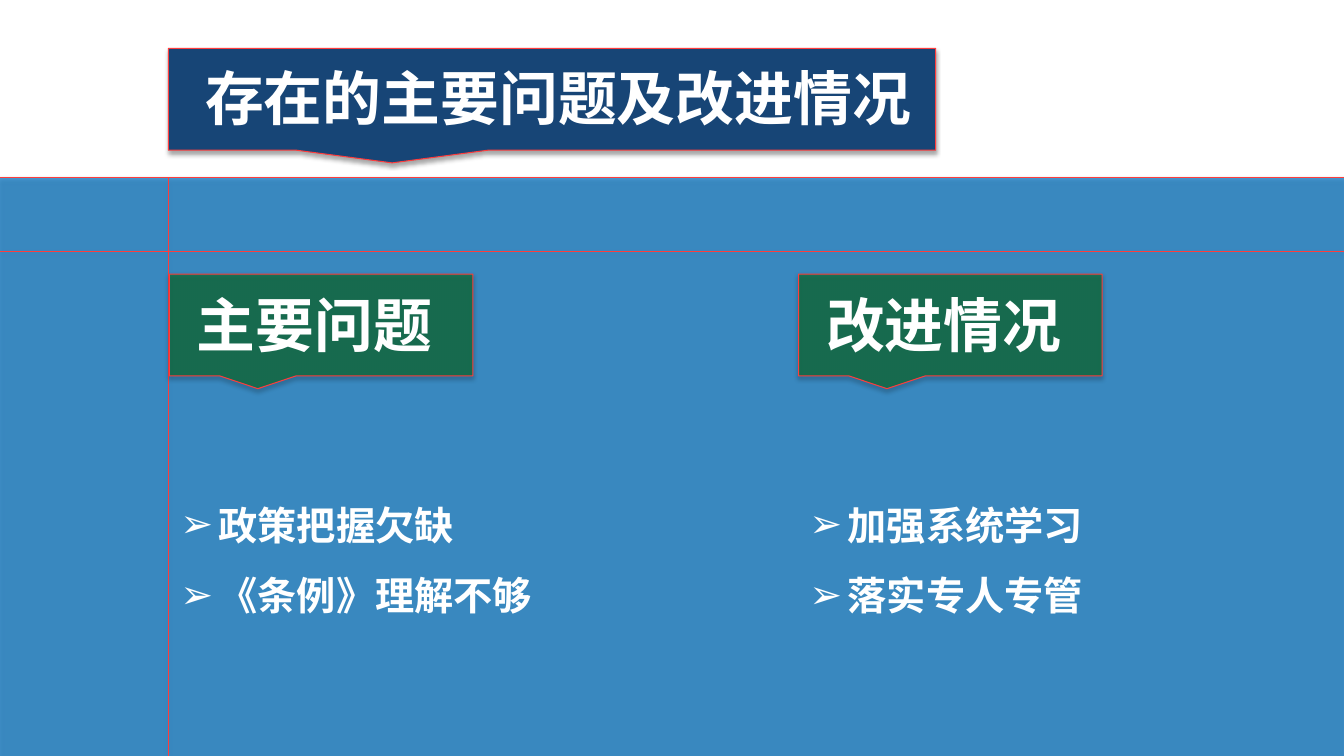
from lxml import etree
from pptx import Presentation
from pptx import util as u
from pptx.dml.color import RGBColor
from pptx.enum import shapes, text
from pptx.oxml.ns import qn

COLORS = {"panel": "0070BF", "section": "006600", "banner": "174576",
          "outline": "FE3D3D", "text": "FFFFFF", "shadow": "000000"}
FONT = "Noto Sans CJK SC"
HEADING_SIZE, ITEM_SIZE = 42, 28
INDENT = u.Inches(0.38)


def rgb(name):
    return RGBColor.from_string(COLORS[name])


def add_block(slide, preset, box, color, opacity=100):
    """Outlined shape with a soft shadow below it."""
    block = slide.shapes.add_shape(preset, *map(u.Inches, box))
    block.fill.solid()
    block.fill.fore_color.rgb = rgb(color)
    if opacity < 100:
        fill = block.fill._xPr.find(qn("a:solidFill"))[0]
        etree.SubElement(fill, qn("a:alpha"), val=str(opacity * 1000))
    block.line.color.rgb = rgb("outline")
    block.line.width = u.Pt(0.75)
    block.shadow.inherit = False
    effects = block._element.spPr.find(qn("a:effectLst"))
    shadow = etree.SubElement(effects, qn("a:outerShdw"), blurRad=str(u.Pt(3.1)),
                              dist=str(u.Pt(1.8)), dir="5400000", rotWithShape="0")
    tint = etree.SubElement(shadow, qn("a:srgbClr"), val=COLORS["shadow"])
    etree.SubElement(tint, qn("a:alpha"), val="35000")


def style_run(run, size):
    run.font.size = u.Pt(size)
    run.font.bold = True
    run.font.name = FONT
    run.font.color.rgb = rgb("text")
    etree.SubElement(run.font._element, qn("a:ea"), typeface=FONT)


def set_heading(holder, words):
    frame = holder.text_frame
    frame.word_wrap = True
    frame.auto_size = text.MSO_AUTO_SIZE.NONE
    frame.vertical_anchor = text.MSO_ANCHOR.MIDDLE
    frame.text = words
    frame.paragraphs[0].alignment = text.PP_ALIGN.CENTER
    style_run(frame.paragraphs[0].runs[0], HEADING_SIZE)


def add_title(slide, left, top):
    add_block(slide, shapes.MSO_SHAPE.RECTANGULAR_CALLOUT,
              (left, top, 7.61, 1.01), "banner")
    title = slide.shapes.title
    title.left, title.top = u.Inches(left - 0.24), u.Inches(top + 0.08)
    title.width, title.height = u.Inches(8.21), u.Inches(0.81)
    set_heading(title, "存在的主要问题及改进情况")
    # Bring the title in front of its banner
    slide.shapes._spTree.append(title._element)


def add_bullets(slide, box, items):
    frame = slide.shapes.add_textbox(*map(u.Inches, box)).text_frame
    frame.word_wrap = True
    frame.text = "\n".join(items)
    for index, item in enumerate(frame.paragraphs):
        props = item._p.get_or_add_pPr()
        props.set("marL", str(INDENT))
        props.set("indent", str(-INDENT))
        etree.SubElement(props, qn("a:buFont"), typeface="Arial")
        etree.SubElement(props, qn("a:buChar"), char="➢")
        if index:
            item.line_spacing = 1.5
        style_run(item.runs[0], ITEM_SIZE)


def add_section(slide, left, top, heading, items):
    """Green callout with a heading, and a bullet list below."""
    add_block(slide, shapes.MSO_SHAPE.RECTANGULAR_CALLOUT,
              (left, top, 3.01, 1.01), "section", 50)
    label = slide.shapes.add_textbox(u.Inches(left + 0.01), u.Inches(top + 0.09),
                                     u.Inches(2.86), u.Inches(0.81))
    set_heading(label, heading)
    add_bullets(slide, (left + 0.01, top + 2.2, 4.18, 1.28), items)


def main():
    prs = Presentation()
    prs.slide_width, prs.slide_height = u.Inches(13.33), u.Inches(7.5)
    slide = prs.slides.add_slide(prs.slide_layouts[5])

    # Blue panel
    add_block(slide, shapes.MSO_SHAPE.FLOWCHART_INTERNAL_STORAGE,
              (0, 1.76, 13.34, 5.89), "panel", 70)

    # Title banner
    add_title(slide, 1.67, 0.48)

    # Problems and improvements
    add_section(slide, 1.68, 2.72, "主要问题", ["政策把握欠缺", "《条例》理解不够"])
    add_section(slide, 7.92, 2.72, "改进情况", ["加强系统学习", "落实专人专管"])

    prs.save("out.pptx")


if __name__ == "__main__":
    main()
